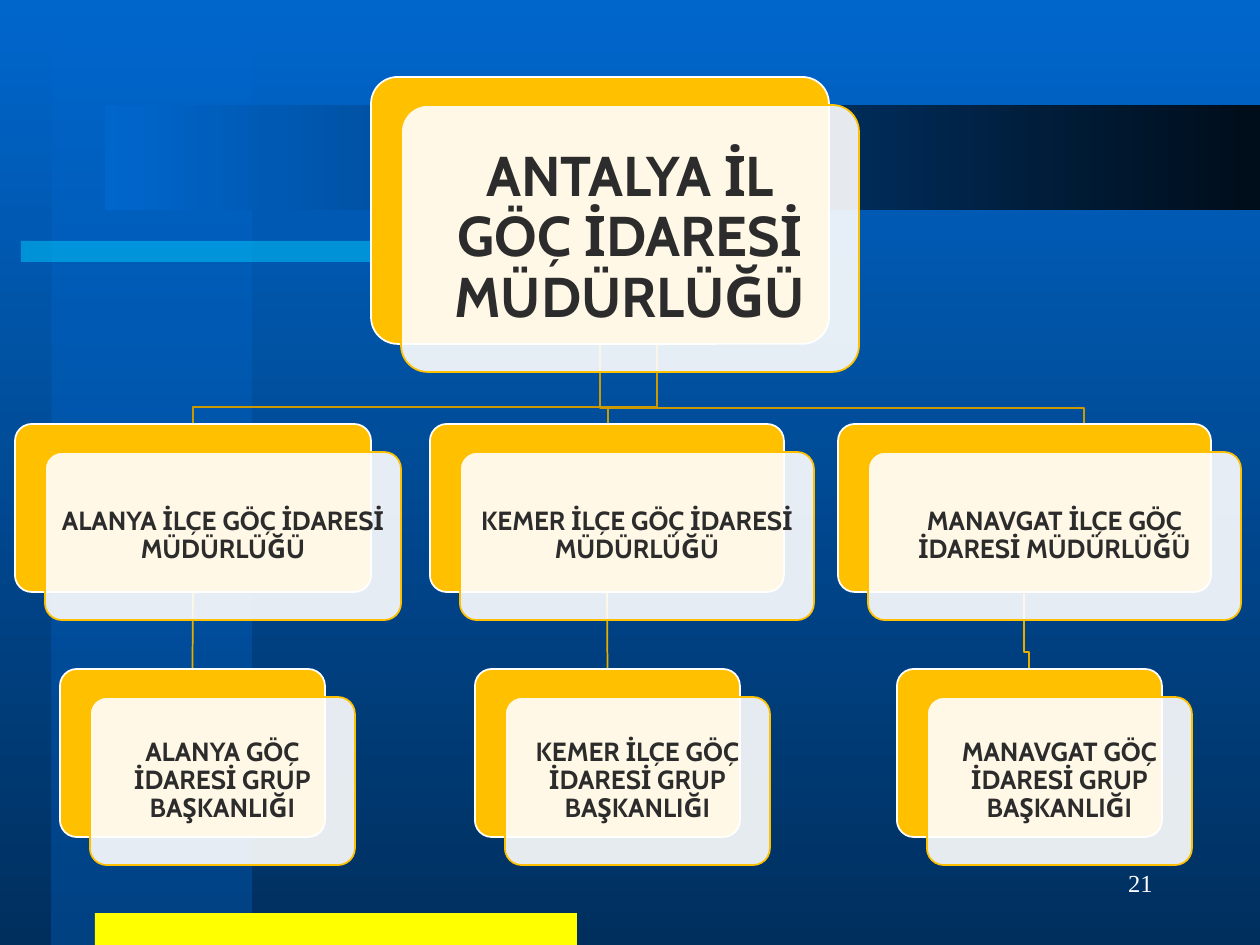
import pptx
import pptx.dml.color
import pptx.enum.shapes
import pptx.enum.text
import pptx.oxml.ns
import pptx.util
from lxml import etree

EMU_PER_PX = 914400 / 126
COLORS = {
    "sky": "0066CC", "deep": "002F5E", "strip": "0053A6", "night": "000D1A",
    "cyan": "00CCFF", "yellow": "FFFF00", "amber": "FFC000", "white": "FFFFFF",
    "text": "2C2C2C", "upper_link": "CC9A00", "lower_link": "E7AE00",
}
CARD_OFFSET = (30, 28)
DISTRICT_HEIGHT = 168
DISTRICT_TOP, GROUP_TOP = 424, 669
GROUP_WIDTH = 265
BRANCHES = [
    (15, 356, 60, "ALANYA İLÇE GÖÇ İDARESİ MÜDÜRLÜĞÜ",
     "ALANYA GÖÇ İDARESİ GRUP BAŞKANLIĞI"),
    (430, 354, 475, "KEMER İLÇE GÖÇ İDARESİ MÜDÜRLÜĞÜ",
     "KEMER İLÇE GÖÇ İDARESİ GRUP BAŞKANLIĞI"),
    (838, 373, 897, "MANAVGAT İLÇE GÖÇ İDARESİ MÜDÜRLÜĞÜ",
     "MANAVGAT GÖÇ İDARESİ GRUP BAŞKANLIĞI"),
]
ROOT_LINKS = [
    [(600, 344), (600, 408), (1084, 408), (1084, 436)],
    [(600, 344), (600, 407), (608, 407), (608, 435)],
    [(657, 344), (657, 407), (193, 407), (193, 435)],
]
MANAVGAT_LINK = [(1024, 593), (1024, 652), (1029, 652), (1029, 680)]


def px(value):
    """Turn pixels into EMU."""
    return pptx.util.Emu(round(value * EMU_PER_PX))


def rgb(name):
    """Look up a named colour."""
    return pptx.dml.color.RGBColor.from_string(COLORS[name])


def set_alpha(shape, percent):
    """Make every colour of the shape's fill translucent."""
    for color in shape.element.spPr.xpath("./a:solidFill/a:srgbClr | ./a:gradFill//a:srgbClr"):
        alpha = etree.SubElement(color, pptx.oxml.ns.qn("a:alpha"))
        alpha.set("val", str(percent * 1000))


def set_gradient(fill, start, end, angle):
    """Apply a two-stop linear gradient."""
    fill.gradient()
    fill.gradient_angle = angle
    for stop, name in zip(fill.gradient_stops, (start, end)):
        stop.color.rgb = rgb(name)


def set_line(line, color):
    """Give a line its colour and width."""
    line.color.rgb = rgb(color)
    line.width = pptx.util.Pt(1)


def format_text(shape, text, size, font, color, align, bold=False):
    """Write one paragraph centred vertically and format its run."""
    frame = shape.text_frame
    frame.text = text
    frame.vertical_anchor = pptx.enum.text.MSO_ANCHOR.MIDDLE
    paragraph = frame.paragraphs[0]
    paragraph.alignment = align
    run_font = paragraph.runs[0].font
    run_font.size = pptx.util.Pt(size)
    run_font.name = font
    run_font.bold = bold
    run_font.color.rgb = rgb(color)
    return frame


def add_box(slide, kind, left, top, width, height, color=None):
    """Add a preset shape without shadow or outline."""
    shape = slide.shapes.add_shape(kind, px(left), px(top), px(width), px(height))
    shape.shadow.inherit = False
    shape.line.fill.background()
    if color:
        shape.fill.solid()
        shape.fill.fore_color.rgb = rgb(color)
    return shape


def add_backdrop(slide):
    """Draw the background gradient and the decorative bands."""
    rectangle = pptx.enum.shapes.MSO_SHAPE.RECTANGLE
    set_gradient(slide.background.fill, "sky", "deep", 270)
    column = add_box(slide, rectangle, 52, 0, 200, 945)
    set_gradient(column.fill, "sky", "strip", 270)
    set_alpha(column, 50)
    set_alpha(add_box(slide, rectangle, 21, 241, 651, 21, "cyan"), 50)
    add_box(slide, rectangle, 95, 913, 482, 32, "yellow")
    band = add_box(slide, rectangle, 105, 105, 1155, 105)
    set_gradient(band.fill, "sky", "night", 0)


def add_card(slide, left, top, width, height, text, size, inset):
    """Add an amber card with a translucent text card; return the amber one."""
    rounded = pptx.enum.shapes.MSO_SHAPE.ROUNDED_RECTANGLE
    back = add_box(slide, rounded, left, top, width, height, "amber")
    front = add_box(slide, rounded, left + CARD_OFFSET[0], top + CARD_OFFSET[1],
                    width, height, "white")
    set_alpha(front, 90)
    for shape, line_color in ((back, "white"), (front, "amber")):
        shape.adjustments[0] = 0.1
        set_line(shape.line, line_color)
    frame = format_text(front, text, size, "Cabin", "text",
                        pptx.enum.text.PP_ALIGN.CENTER, bold=True)
    frame.word_wrap = True
    frame.margin_left = frame.margin_right = px(inset)
    frame.margin_top = frame.margin_bottom = px(inset)
    frame.paragraphs[0].line_spacing = 0.9
    return back


def add_elbow(slide, points, color):
    """Add an open bent line through the points."""
    builder = slide.shapes.build_freeform(*points[0], scale=EMU_PER_PX)
    builder.add_line_segments(points[1:], close=False)
    shape = builder.convert_to_shape()
    shape.shadow.inherit = False
    shape.fill.background()
    set_line(shape.line, color)


def add_drop(slide, x, top, bottom):
    """Add a straight vertical connector."""
    connector = slide.shapes.add_connector(
        pptx.enum.shapes.MSO_CONNECTOR.STRAIGHT, px(x), px(top), px(x), px(bottom))
    set_line(connector.line, "lower_link")
    etree.SubElement(connector.element.spPr, pptx.oxml.ns.qn("a:effectLst"))
    return connector


def add_chart_of_offices(slide):
    """Draw links first, then the cards that cover them."""
    add_elbow(slide, MANAVGAT_LINK, "lower_link")
    for points in ROOT_LINKS:
        add_elbow(slide, points, "upper_link")
    drops = [add_drop(slide, left + width / 2, DISTRICT_TOP + DISTRICT_HEIGHT, GROUP_TOP)
             for left, width, *_ in BRANCHES[:2]]
    add_card(slide, 371, 77, 458, 267, "ANTALYA İL GÖÇ İDARESİ MÜDÜRLÜĞÜ", 32, 24)
    pairs = []
    for left, width, group_left, district, group in BRANCHES:
        pairs.append((
            add_card(slide, left, DISTRICT_TOP, width, DISTRICT_HEIGHT, district, 15, 12),
            add_card(slide, group_left, GROUP_TOP, GROUP_WIDTH, DISTRICT_HEIGHT, group, 15, 12),
        ))
    for drop, (district_card, group_card) in zip(drops, pairs):
        drop.begin_connect(district_card, 2)
        drop.end_connect(group_card, 0)


def add_page_number(slide):
    """Add the page number at the lower right."""
    box = slide.shapes.add_textbox(px(903), px(851), px(262), px(63))
    frame = format_text(box, "21", 14, "Times New Roman", "white",
                        pptx.enum.text.PP_ALIGN.RIGHT)
    frame.word_wrap = True


def main():
    """Build and save the slide."""
    presentation = pptx.Presentation()
    presentation.slide_width = px(1260)
    presentation.slide_height = px(945)
    slide = presentation.slides.add_slide(presentation.slide_layouts[6])
    add_backdrop(slide)
    add_page_number(slide)
    add_chart_of_offices(slide)
    presentation.save("out.pptx")


if __name__ == "__main__":
    main()
